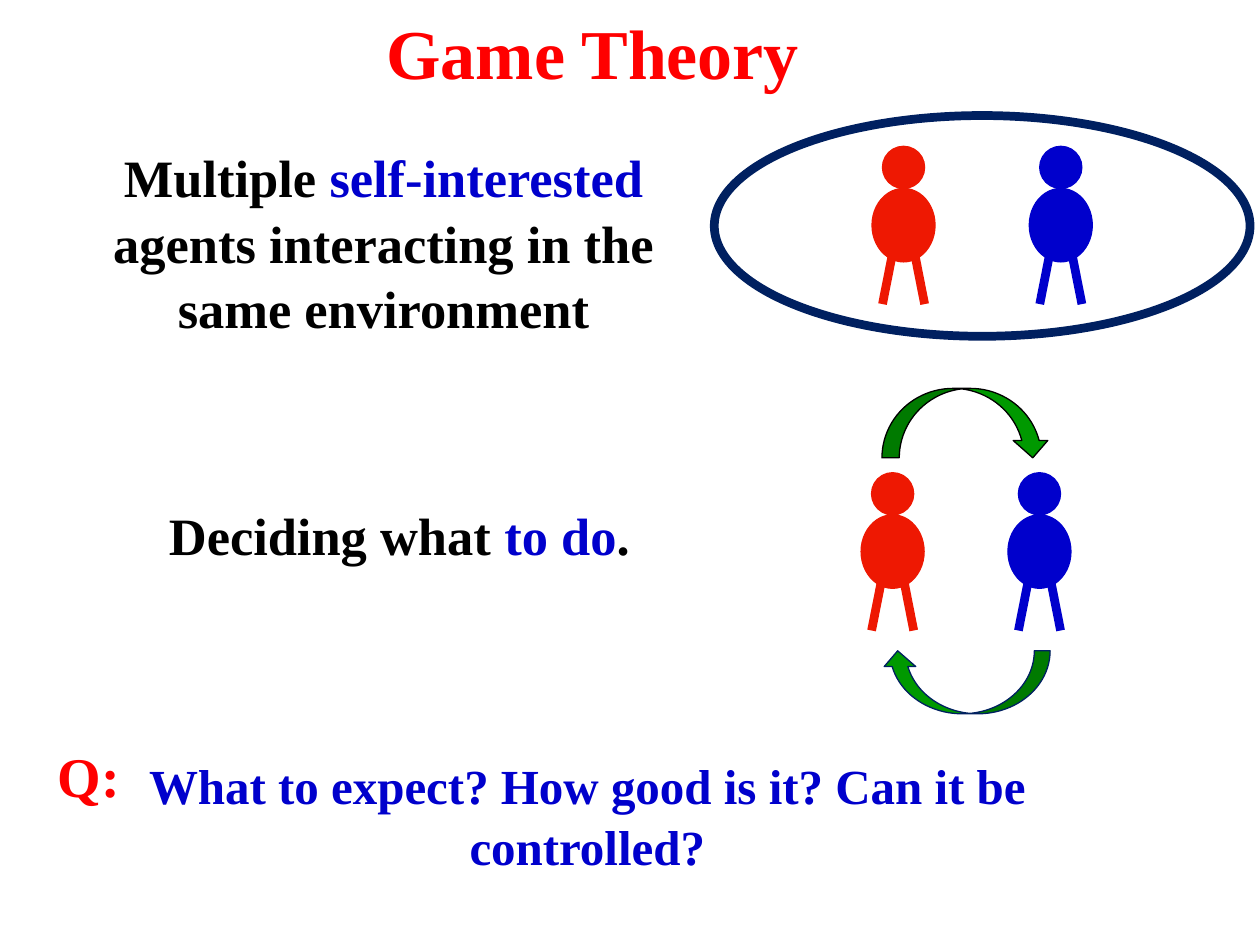
from lxml import etree
from pptx import Presentation
from pptx.dml.color import RGBColor
from pptx.enum.shapes import MSO_CONNECTOR, MSO_SHAPE
from pptx.enum.text import MSO_ANCHOR, PP_ALIGN
from pptx.oxml.ns import qn
from pptx.util import Cm, Pt

OVAL = MSO_SHAPE.OVAL
DOWN, UP = MSO_SHAPE.CURVED_DOWN_ARROW, MSO_SHAPE.CURVED_UP_ARROW
LINE = MSO_CONNECTOR.STRAIGHT
CENTER, TOP = PP_ALIGN.CENTER, MSO_ANCHOR.TOP
RED, BLUE, BLACK = "EE1802", "0000CC", "000000"
BRIGHT, NAVY, GREEN = "FF0000", "002060", "009900"
hue = RGBColor.from_string


def draw(parent, kind, box, fill, edge, width=0.75):
    """Add a preset shape; box is left, top, width, height in cm."""
    shape = parent.add_shape(kind, *map(Cm, box))
    shape.shadow.inherit = False
    if fill:
        shape.fill.solid()
        shape.fill.fore_color.rgb = hue(fill)
    else:
        shape.fill.background()
    shape.line.color.rgb = hue(edge)
    shape.line.width = Pt(width)
    return shape


def write(shape, box, runs, size, gap=0, lead=1.0):
    """Place a text shape and fill it with coloured bold runs."""
    shape.left, shape.top, shape.width, shape.height = map(Cm, box)
    frame = shape.text_frame
    look = {"word_wrap": True, "vertical_anchor": TOP,
            "margin_left": Cm(0.25), "margin_right": Cm(0.25),
            "margin_top": Cm(0.14), "margin_bottom": Cm(0.14)}
    for name, value in look.items():
        setattr(frame, name, value)
    para = frame.paragraphs[0]
    form = {"alignment": CENTER, "space_before": Pt(gap), "line_spacing": lead}
    for name, value in form.items():
        setattr(para, name, value)
    for text, color in runs:
        run = para.add_run()
        run.text = text
        font = {"name": "Times New Roman", "size": Pt(size), "bold": True}
        for name, value in font.items():
            setattr(run.font, name, value)
        run.font.color.rgb = hue(color)


deck = Presentation()
deck.slide_width, deck.slide_height = Cm(25.4), Cm(19.05)
slide = deck.slides.add_slide(deck.slide_layouts[5])
shapes = slide.shapes

# Title
write(shapes.title, (5.5, 0.05, 12.9, 1.95), [("Game Theory", BRIGHT)], 40)

# Statements and closing question
notes = [
    ((1.5, 2.74, 12.47, 4.65), 30, 2, 1.04,
     [("Multiple ", BLACK), ("self-interested ", BLUE),
      ("agents interacting in the same environment", BLACK)]),
    ((1.5, 9.96, 13.1, 2.54), 30, 2, 1.04,
     [("Deciding what ", BLACK), ("to do", BLUE), (".", BLACK)]),
    ((0.84, 14.81, 1.9, 1.63), 32, 0, 1.0, [("Q:", BRIGHT)]),
    ((2.44, 15.06, 18.8, 2.6), 28, 0, 1.03,
     [("What to expect? How good is it? Can it be controlled?", BLUE)]),
]
for box, size, gap, lead, runs in notes:
    write(shapes.add_textbox(0, 0, 0, 0), box, runs, size, gap, lead)

# Agents: body, head and two legs in one group each
agents = [(17.58, 2.95, RED), (20.75, 2.95, BLUE),
          (17.36, 9.53, RED), (20.32, 9.53, BLUE)]
for x, y, color in agents:
    agent = shapes.add_group_shape().shapes
    draw(agent, OVAL, (x, y + 0.85, 1.27, 1.48), color, color)
    draw(agent, OVAL, (x + 0.21, y, 0.85, 0.85), color, color)
    for hip, foot in ((0.42, 0.21), (0.85, 1.06)):
        ends = (x + hip, y + 2.12, x + foot, y + 3.18)
        leg = agent.add_connector(LINE, *map(Cm, ends))
        leg.line.color.rgb = hue(color)
        leg.line.width = Pt(5)
        etree.SubElement(leg._element.spPr, qn("a:effectLst"))

# Shared environment
draw(shapes, OVAL, (14.4, 2.33, 10.8, 4.45), None, NAVY, 5)

# Interaction arrows
draw(shapes, DOWN, (17.78, 7.83, 3.39, 1.4), GREEN, BLACK)
back = draw(shapes, UP, (17.78, 13.12, 3.39, 1.27), GREEN, NAVY)
back._element.spPr.find(qn("a:xfrm")).set("flipH", "1")

deck.save("out.pptx")
